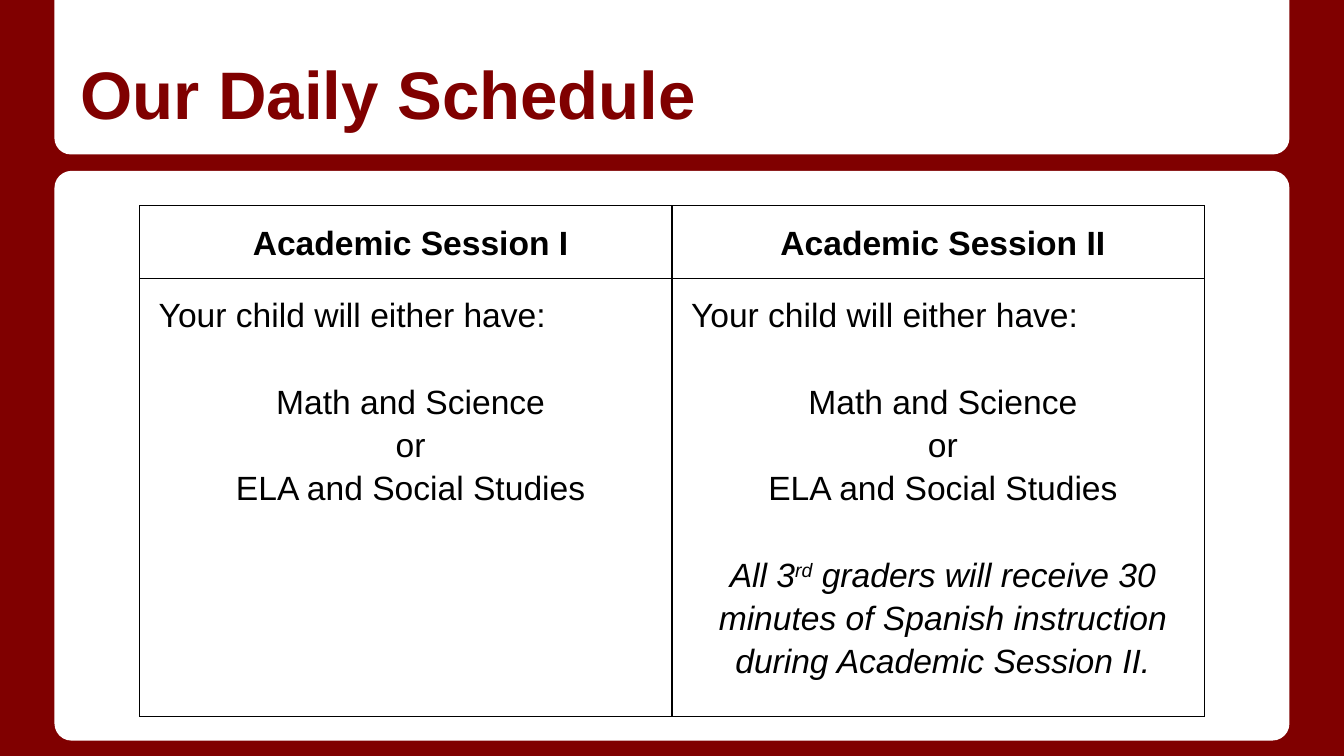
from lxml.etree import SubElement
from pptx import Presentation
from pptx.dml.color import RGBColor
from pptx.enum.shapes import MSO_SHAPE
from pptx.enum.text import MSO_ANCHOR, PP_ALIGN
from pptx.oxml.ns import qn
from pptx.util import Cm, Pt

FONT = "Arial"
MAROON, WHITE, BLACK = "800000", "FFFFFF", "000000"
LINE_HEIGHT = Pt(23.2)
CHOICES = ["Math and Science", "or", "ELA and Social Studies"]
SPANISH_NOTE = [
    ("All 3", 0),
    ("rd", 30000),
    (" graders will receive 30 minutes of Spanish instruction during Academic Session II.", 0),
]
SESSIONS = [("Academic Session I", []), ("Academic Session II", SPANISH_NOTE)]


def color(value):
    """Turn a hex string into a colour."""
    return RGBColor.from_string(value)


def style_run(run, size, value, bold=False, italic=False):
    """Set the font of one run."""
    run.font.name = FONT
    run.font.size = Pt(size)
    run.font.bold = bold
    run.font.italic = italic
    run.font.color.rgb = color(value)


def add_panel(slide, preset, adjustments, box):
    """Place a white rounded panel in the box."""
    shape = slide.shapes.add_shape(preset, *box)
    for index, adjustment in enumerate(adjustments):
        shape.adjustments[index] = adjustment
    shape.shadow.inherit = False
    shape.fill.solid()
    shape.fill.fore_color.rgb = color(WHITE)
    shape.line.fill.background()


def add_title(slide, text, box):
    """Place the slide title at the bottom of the box."""
    text_frame = slide.shapes.add_textbox(*box).text_frame
    text_frame.word_wrap = True
    text_frame.vertical_anchor = MSO_ANCHOR.BOTTOM
    text_frame.margin_left = text_frame.margin_right = Cm(0.25)
    text_frame.margin_top = text_frame.margin_bottom = Cm(0.25)
    text_frame.text = text
    style_run(text_frame.paragraphs[0].runs[0], 36, MAROON, bold=True)


def format_paragraph(paragraph, alignment, gap_before=False):
    """Set alignment, indent and spacing of a table paragraph."""
    paragraph.alignment = alignment
    paragraph.line_spacing = 1.15
    paragraph.space_before = LINE_HEIGHT if gap_before else Pt(0)
    properties = paragraph._p.get_or_add_pPr()
    properties.set("marL", str(Cm(0.18)))
    properties.set("indent", "0")


def format_cell(cell):
    """Give a cell its margins, black borders and no fill."""
    cell.margin_left = cell.margin_right = Cm(0.18)
    cell.margin_top = cell.margin_bottom = Cm(0.25)
    properties = cell._tc.get_or_add_tcPr()
    for side in ("a:lnL", "a:lnR", "a:lnT", "a:lnB"):
        border = SubElement(properties, qn(side), w=str(Pt(0.75)))
        fill = SubElement(border, qn("a:solidFill"))
        SubElement(fill, qn("a:srgbClr"), val=BLACK)
    cell.fill.background()


def fill_heading(cell, heading):
    """Write the bold heading of a session."""
    format_cell(cell)
    cell.text_frame.text = heading
    paragraph = cell.text_frame.paragraphs[0]
    format_paragraph(paragraph, PP_ALIGN.CENTER)
    style_run(paragraph.runs[0], 18, BLACK, bold=True)


def fill_body(cell, note):
    """Write the subject choices of a session and its note."""
    format_cell(cell)
    text_frame = cell.text_frame
    text_frame.text = "\n".join(["Your child will either have:", *CHOICES])
    for index, paragraph in enumerate(text_frame.paragraphs):
        alignment = PP_ALIGN.CENTER if index else PP_ALIGN.LEFT
        format_paragraph(paragraph, alignment, gap_before=index == 1)
        style_run(paragraph.runs[0], 18, BLACK)
    if note:
        paragraph = text_frame.add_paragraph()
        format_paragraph(paragraph, PP_ALIGN.CENTER, gap_before=True)
        for text, baseline in note:
            run = paragraph.add_run()
            run.text = text
            style_run(run, 18, BLACK, italic=True)
            run._r.get_or_add_rPr().set("baseline", str(baseline))


def add_schedule(slide, box):
    """Place the table of sessions in the box."""
    left, top, width, height = box
    table = slide.shapes.add_table(2, len(SESSIONS), left, top, width, height).table
    table.first_row = table.horz_banding = False
    table.rows[0].height = Cm(1.32)
    table.rows[1].height = height - Cm(1.32)
    for column, (heading, note) in enumerate(SESSIONS):
        table.columns[column].width = width // len(SESSIONS)
        fill_heading(table.cell(0, column), heading)
        fill_body(table.cell(1, column), note)


def main():
    """Build and save the daily schedule slide."""
    presentation = Presentation()
    presentation.slide_width, presentation.slide_height = Cm(25.4), Cm(14.29)
    slide = presentation.slides.add_slide(presentation.slide_layouts[6])
    slide.background.fill.solid()
    slide.background.fill.fore_color.rgb = color(MAROON)
    left, width = Cm(1.03), Cm(23.34)
    add_panel(slide, MSO_SHAPE.ROUNDED_RECTANGLE, [0.03], (left, Cm(3.23), width, Cm(10.77)))
    add_panel(slide, MSO_SHAPE.ROUND_2_SAME_RECTANGLE, [0, 0.106], (left, Cm(0), width, Cm(2.92)))
    add_title(slide, "Our Daily Schedule", (Cm(1.27), Cm(0.38), Cm(22.86), Cm(2.39)))
    add_schedule(slide, (Cm(2.64), Cm(3.89), Cm(20.12), Cm(9.18)))
    presentation.save("out.pptx")


if __name__ == "__main__":
    main()
